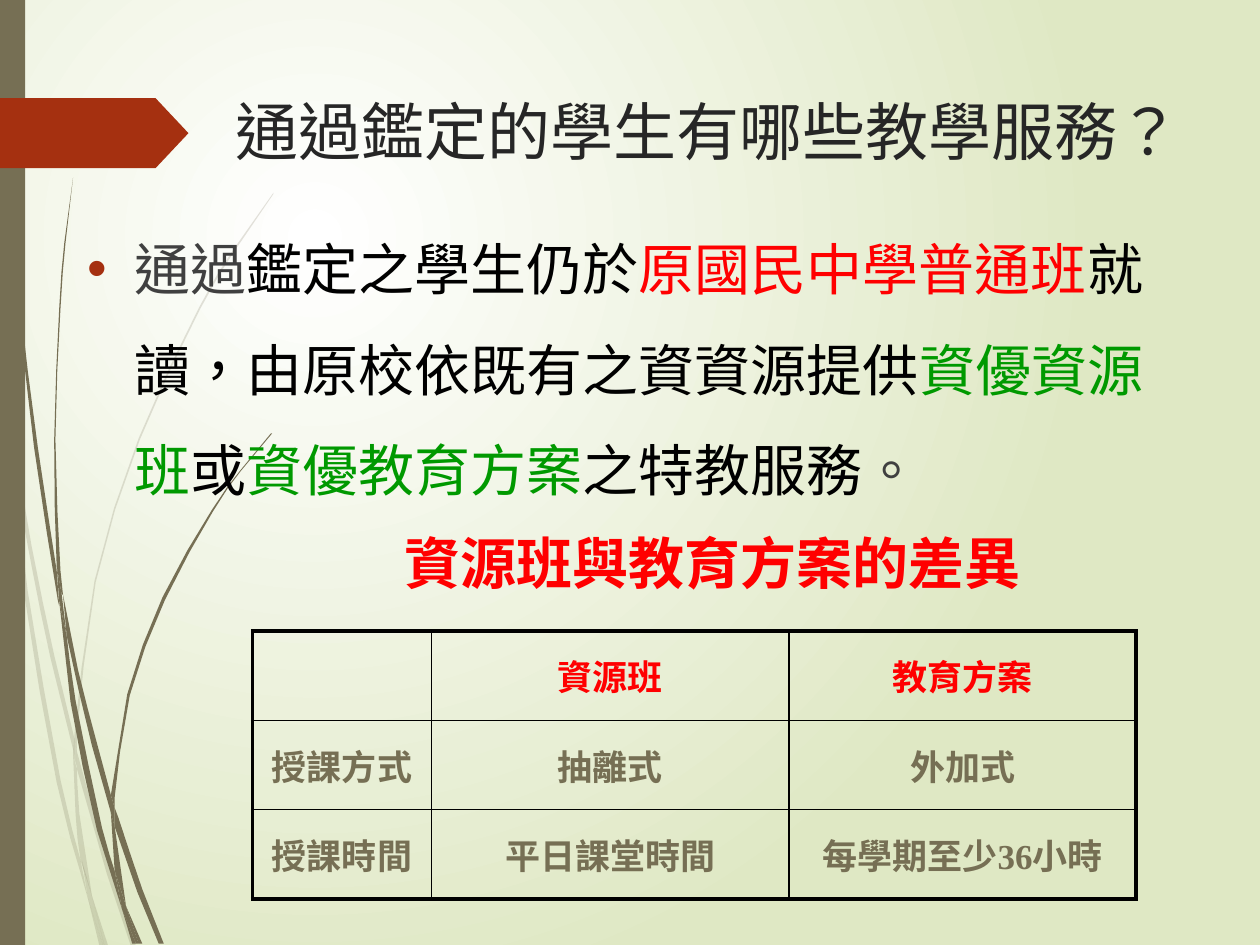
import pptx
import pptx.dml.color
import pptx.enum.shapes
import pptx.enum.text
import pptx.oxml
import pptx.oxml.ns
import pptx.util
from lxml import etree

Cm, Pt = pptx.util.Cm, pptx.util.Pt
qn = pptx.oxml.ns.qn
MSO_SHAPE = pptx.enum.shapes.MSO_SHAPE
PP_ALIGN = pptx.enum.text.PP_ALIGN
MSO_ANCHOR = pptx.enum.text.MSO_ANCHOR
MSO_AUTO_SIZE = pptx.enum.text.MSO_AUTO_SIZE

COLORS = {
    "glow": "FFFFFF", "edge": "DFE8C4", "olive": "766F54", "rust": "A53010",
    "title": "262626", "body": "404040", "black": "000000",
    "red": "FF0000", "green": "009900",
}
CJK_FONT = "Noto Sans CJK SC"
GRASS_UNIT = Cm(0.0254)

# Each blade has two edges, given in grass units from the slide's top left.
PALE_BLADES = [
    ([(0, 282), (6, 322), (8, 350)], [(0, 299), (7, 344), (8, 350)]),
    ([(10, 345), (25, 433), (43, 520), (59, 586)],
     [(10, 345), (12, 376), (25, 449), (40, 522), (59, 599)]),
    ([(61, 596), (64, 607), (88, 692), (108, 751)], [(61, 610), (85, 694), (104, 751)]),
    ([(73, 711), (86, 751)], [(73, 711), (83, 751)]),
    ([(8, 350), (12, 376), (22, 469), (48, 619), (64, 683), (70, 714)],
     [(8, 350), (19, 470), (45, 621), (64, 693), (70, 714)]),
    ([(58, 599), (61, 610), (63, 646), (73, 711)],
     [(58, 599), (60, 646), (64, 683), (73, 711)]),
    ([(217, 153), (186, 197), (158, 244), (110, 348), (75, 461), (59, 584), (59, 586)],
     [(217, 154), (187, 198), (159, 245), (111, 349), (76, 462), (61, 584), (61, 596)]),
    ([(70, 714), (79, 751)], [(70, 714), (82, 751)]),
    ([(59, 586), (58, 599), (61, 608)], [(59, 586), (61, 596), (61, 610)]),
    ([(65, 683), (70, 714), (82, 751)], [(65, 683), (73, 711), (83, 751)]),
]
DARK_BLADES = [
    ([(2, 0), (5, 110), (14, 233), (27, 355), (46, 477), (47, 481)],
     [(3, 0), (6, 109), (15, 232), (30, 355), (45, 453), (47, 481)]),
    ([(50, 472), (53, 505), (73, 592), (88, 645)], [(50, 472), (62, 532), (77, 590), (88, 631)]),
    ([(91, 641), (94, 649), (113, 706), (130, 749)], [(91, 656), (109, 708), (126, 749)]),
    ([(47, 477), (56, 557), (77, 659), (97, 722)],
     [(47, 477), (53, 505), (60, 556), (81, 657), (91, 691), (97, 722)]),
    ([(58, 141), (51, 193), (47, 245), (43, 349), (45, 449), (49, 472)],
     [(58, 141), (52, 193), (48, 245), (44, 349), (48, 453), (50, 472)]),
    ([(100, 719), (110, 749)], [(100, 719), (113, 749)]),
    ([(45, 449), (47, 477), (53, 505)], [(45, 449), (49, 472), (53, 505)]),
    ([(215, 344), (191, 373), (168, 405), (129, 474), (101, 551), (88, 631)],
     [(216, 344), (191, 374), (169, 406), (131, 476), (103, 552), (91, 633), (91, 641)]),
    ([(97, 722), (105, 749)], [(97, 722), (108, 749)]),
    ([(88, 645), (91, 691), (100, 719)], [(88, 645), (91, 656), (100, 719)]),
    ([(88, 631), (88, 645), (91, 656)], [(88, 631), (91, 641), (91, 656)]),
    ([(91, 691), (97, 722), (108, 749)], [(91, 691), (100, 719), (110, 749)]),
]

SERVICES = [
    ("通過", "body"), ("鑑定之學生仍於", "black"), ("原國民中學普通班", "red"),
    ("就讀，由原校依既有之資資源提供", "black"), ("資優資源班", "green"),
    ("或", "black"), ("資優教育方案", "green"), ("之特教服務", "black"), ("。", "body"),
]
COMPARISON = [
    ["", "資源班", "教育方案"],
    ["授課方式", "抽離式", "外加式"],
    ["授課時間", "平日課堂時間", "每學期至少36小時"],
]


def rgb(name):
    return pptx.dml.color.RGBColor.from_string(COLORS[name])


def add_run(paragraph, text, color, size, font=CJK_FONT, bold=False):
    run = paragraph.add_run()
    run.text = text
    run.font.size, run.font.bold, run.font.name = Pt(size), bold, font
    run.font.color.rgb = rgb(color)
    properties = run.font._element
    properties.set("lang", "zh-TW")
    east_asian = etree.Element(qn("a:ea"), typeface=CJK_FONT)
    properties.find(qn("a:latin")).addnext(east_asian)


def paint(shape, color, opacity=100):
    shape.shadow.inherit = False
    shape.line.fill.background()
    shape.fill.solid()
    shape.fill.fore_color.rgb = rgb(color)
    if opacity < 100:
        tint = shape._element.spPr.find(f".//{qn('a:srgbClr')}")
        etree.SubElement(tint, qn("a:alpha"), val=str(opacity * 1000))


def smooth_edge(points):
    """Add a Catmull-Rom midpoint to each inner span of a long edge."""
    curve = points[:2]
    for a, b, c, d in zip(points, points[1:], points[2:], points[3:]):
        curve.append(tuple((9 * (q + r) - p - s) / 16 for p, q, r, s in zip(a, b, c, d)))
        curve.append(c)
    return curve + points[max(2, len(points) - 1):]


def add_blade(slide, edges, opacity):
    first, second = map(smooth_edge, edges)
    outline = [(round(x * GRASS_UNIT), round(y * GRASS_UNIT))
               for x, y in first + second[::-1]]
    if outline[-1] == outline[0]:
        outline.pop()
    builder = slide.shapes.build_freeform(*outline[0])
    builder.add_line_segments(outline[1:], close=True)
    paint(builder.convert_to_shape(), "olive", opacity)


def set_background(slide):
    fill = slide.background.fill
    fill.gradient()
    for stop, color in zip(fill.gradient_stops, ("glow", "edge")):
        stop.color.rgb = rgb(color)
    gradient = slide._element.find(f".//{qn('a:gradFill')}")
    gradient.remove(gradient.find(qn("a:lin")))
    circle = etree.SubElement(gradient, qn("a:path"), path="circle")
    etree.SubElement(circle, qn("a:fillToRect"), l="50000", t="50000", r="100000", b="100000")


def add_decoration(slide):
    for blades, opacity in ((PALE_BLADES, 20), (DARK_BLADES, 100)):
        for edges in blades:
            add_blade(slide, edges, opacity)
    side_band = slide.shapes.add_shape(MSO_SHAPE.RECTANGLE, 0, 0, Cm(0.51), Cm(19.05))
    paint(side_band, "olive")
    tag = slide.shapes.add_shape(MSO_SHAPE.PENTAGON, 0, Cm(1.98), Cm(3.8), Cm(1.41))
    tag.adjustments[0] = 0.47
    paint(tag, "rust")


def place_text(placeholder, left, top, width, height):
    """Move a placeholder in front of the decoration and return its paragraph."""
    placeholder._element.getparent().append(placeholder._element)
    placeholder.left, placeholder.top = Cm(left), Cm(top)
    placeholder.width, placeholder.height = Cm(width), Cm(height)
    frame = placeholder.text_frame
    frame.auto_size = MSO_AUTO_SIZE.NONE
    frame.vertical_anchor = MSO_ANCHOR.TOP
    frame.paragraphs[0].alignment = PP_ALIGN.LEFT
    return frame.paragraphs[0]


def set_bullet(paragraph, color):
    properties = paragraph._p.get_or_add_pPr()
    properties.set("marL", str(Cm(0.95)))
    properties.set("indent", str(-Cm(0.95)))
    tint = etree.SubElement(properties, qn("a:buClr"))
    etree.SubElement(tint, qn("a:srgbClr"), val=COLORS[color])
    etree.SubElement(properties, qn("a:buFont"), typeface="Arial")
    etree.SubElement(properties, qn("a:buChar"), char="•")


def set_borders(cell, outer_sides):
    for side in "LRTB":
        width = Pt(2.25) if side in outer_sides else Pt(1)
        line = etree.SubElement(cell._tc.get_or_add_tcPr(), qn(f"a:ln{side}"), w=str(width))
        ink = etree.SubElement(line, qn("a:solidFill"))
        etree.SubElement(ink, qn("a:srgbClr"), val=COLORS["black"])


def add_comparison(slide):
    last = len(COMPARISON) - 1
    table = slide.shapes.add_table(3, 3, Cm(5.09), Cm(12.72), Cm(17.81), Cm(5.4)).table
    table.first_row = table.horz_banding = False
    for column, width in zip(table.columns, (3.61, 7.21, 6.99)):
        column.width = Cm(width)
    for r, texts in enumerate(COMPARISON):
        table.rows[r].height = Cm(1.8)
        for c, text in enumerate(texts):
            cell = table.cell(r, c)
            edges = {"L": c == 0, "R": c == last, "T": r == 0, "B": r == last}
            set_borders(cell, [side for side, outer in edges.items() if outer])
            cell.fill.background()
            cell.vertical_anchor = MSO_ANCHOR.MIDDLE
            if text:
                paragraph = cell.text_frame.paragraphs[0]
                paragraph.alignment, paragraph.space_before = PP_ALIGN.CENTER, Pt(4)
                add_run(paragraph, text, "olive" if r else "red", 20, "Times New Roman", True)


def add_caption(slide):
    caption = slide.shapes.add_textbox(Cm(7.9), Cm(10.52), Cm(13.06), Cm(1.62)).text_frame
    caption.word_wrap = False
    add_run(caption.paragraphs[0], "資源班與教育方案的差異", "red", 32, "League Spartan", True)


def main():
    deck = pptx.Presentation()
    deck.slide_width, deck.slide_height = Cm(25.4), Cm(19.05)
    slide = deck.slides.add_slide(deck.slide_layouts[1])
    set_background(slide)
    add_decoration(slide)
    title = place_text(slide.shapes.title, 4.5, 1.73, 19.2, 2.18)
    add_run(title, "通過鑑定的學生有哪些教學服務？", "title", 36)
    services = place_text(slide.placeholders[1], 1.5, 3.92, 22.86, 5)
    services.line_spacing, services.space_before = 1.5, Pt(10)
    set_bullet(services, "rust")
    for text, color in SERVICES:
        add_run(services, text, color, 32)
    add_comparison(slide)
    add_caption(slide)
    deck.save("out.pptx")


if __name__ == "__main__":
    main()
